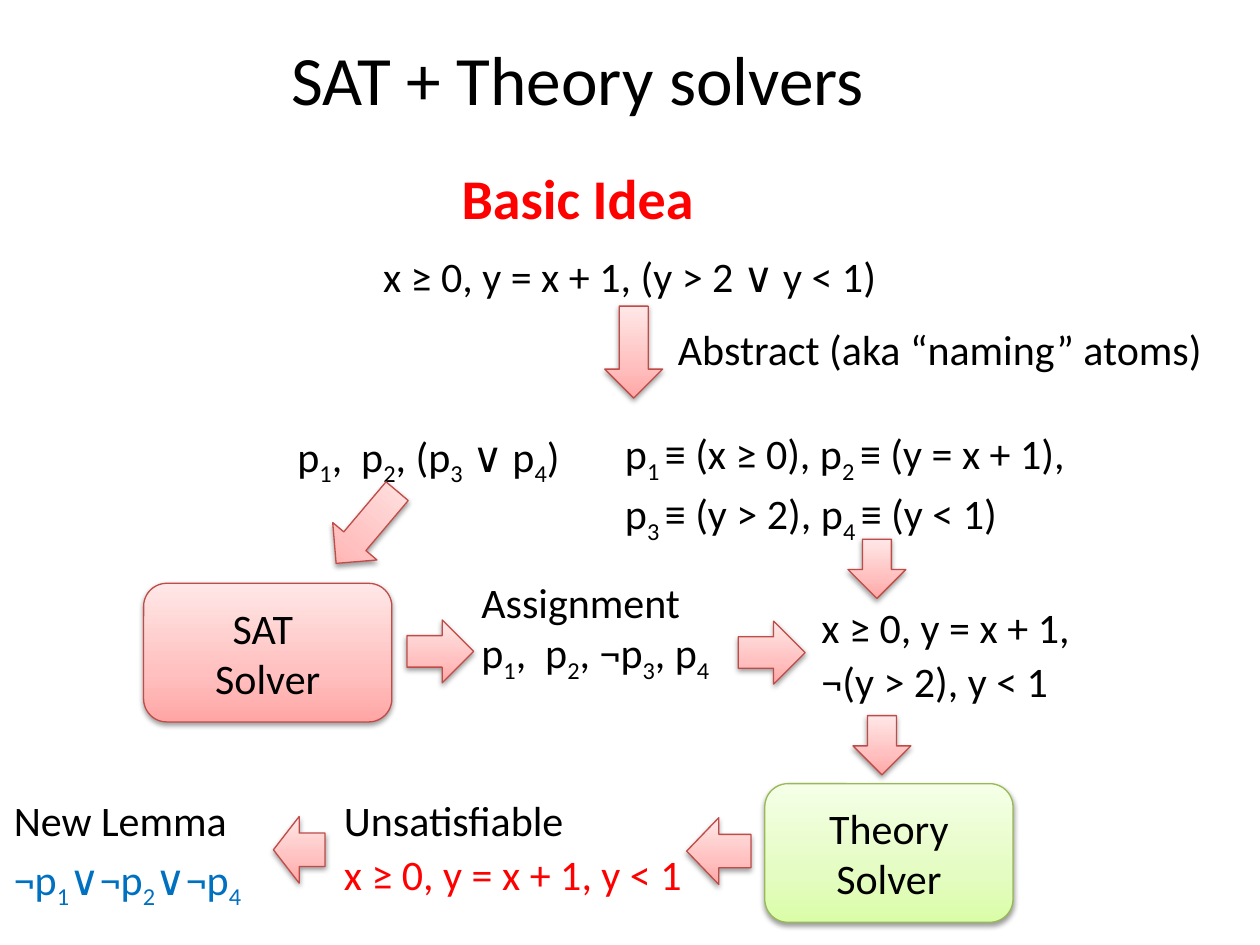
from dataclasses import dataclass

from lxml import etree
from pptx import Presentation
from pptx import util as u
from pptx.dml.color import RGBColor
from pptx.enum import shapes, text
from pptx.oxml import parse_xml
from pptx.oxml.ns import qn

A = "http://schemas.openxmlformats.org/drawingml/2006/main"
MSO = shapes.MSO_SHAPE
ALIGN = text.PP_ALIGN
ANCHOR = text.MSO_ANCHOR


@dataclass(frozen=True)
class Theme:
    font: str = "Calibri"
    title: float = 39.6
    heading: float = 32
    body: float = 24
    black: str = "000000"
    red: str = "FF0000"
    blue: str = "0070C0"
    # Line colour, then gradient colours from bottom to top
    pink: tuple = ("BF4C48", "FFA6A5", "FFC0BF", "FFE7E7")
    green: tuple = ("98B955", "DAFDA7", "E4FCC2", "F5FFE7")


T = Theme()


def add_runs(p, line, size=T.body, color=T.black, bold=False):
    """Write a line in runs; every second part between bars is a subscript."""
    for i, part in enumerate(line.split("|")):
        if not part:
            continue
        r = p.add_run()
        r.text = part
        f = r.font
        f.name, f.size, f.bold = T.font, u.Pt(size), bold
        f.color.rgb = RGBColor.from_string(color)
        if i % 2:
            f._element.set("baseline", "-25000")


def space_before(p, percent):
    pPr = p._p.get_or_add_pPr()
    spc = etree.SubElement(pPr, qn("a:spcBef"))
    etree.SubElement(spc, qn("a:spcPct")).set("val", str(percent * 1000))


def hang(p, inches):
    pPr = p._p.get_or_add_pPr()
    pPr.set("marL", str(u.Inches(inches)))
    pPr.set("indent", str(-u.Inches(inches)))


def set_insets(tf, x, y):
    tf.margin_left = tf.margin_right = u.Inches(x)
    tf.margin_top = tf.margin_bottom = u.Inches(y)


def add_box(s, at):
    tf = s.shapes.add_textbox(*map(u.Inches, at)).text_frame
    tf.word_wrap = True
    return tf


def add_heading(s, at, line, size, anchor=ANCHOR.TOP, **style):
    tf = add_box(s, at)
    tf.vertical_anchor = anchor
    p = tf.paragraphs[0]
    p.alignment = ALIGN.CENTER
    add_runs(p, line, size, **style)
    return p


def add_formula(s, at, *lines, align=ALIGN.LEFT, before=20, last=T.black):
    """Add lines of formula text; the last line may have its own colour."""
    tf = add_box(s, at)
    set_insets(tf, 0, 0)
    tf.auto_size = text.MSO_AUTO_SIZE.SHAPE_TO_FIT_TEXT
    for i, line in enumerate(lines):
        p = tf.add_paragraph() if i else tf.paragraphs[0]
        p.alignment, p.line_spacing = align, 0.9
        hang(p, 0.42)
        space_before(p, before)
        add_runs(p, line, color=last if i == len(lines) - 1 else T.black)


def add_glossy(s, kind, at, colors=T.pink, rotation=0):
    """Add a shape with a three-stop gradient, thin line and soft shadow."""
    sp = s.shapes.add_shape(kind, *map(u.Inches, at))
    sp.rotation = rotation
    line, *stops = colors
    gs = "".join(f'<a:gs pos="{pos}000"><a:srgbClr val="{c}"/></a:gs>'
                 for pos, c in zip((0, 35, 100), stops))
    sp._element.spPr.append(parse_xml(
        f'<a:gradFill xmlns:a="{A}" rotWithShape="1"><a:gsLst>{gs}</a:gsLst>'
        '<a:lin ang="16200000" scaled="1"/></a:gradFill>'))
    sp.line.color.rgb = RGBColor.from_string(line)
    sp.line.width = u.Pt(0.75)
    sp._element.spPr.append(parse_xml(
        f'<a:effectLst xmlns:a="{A}"><a:outerShdw blurRad="{u.Pt(3.1)}" '
        f'dist="{u.Pt(1.6)}" dir="5400000" rotWithShape="0">'
        '<a:srgbClr val="000000"><a:alpha val="38000"/></a:srgbClr>'
        '</a:outerShdw></a:effectLst>'))
    return sp


def add_solver(s, left, top, lines, colors):
    sp = add_glossy(s, MSO.ROUNDED_RECTANGLE, (left, top, 1.97, 1.1), colors)
    tf = sp.text_frame
    tf.vertical_anchor = ANCHOR.MIDDLE
    set_insets(tf, 0.12, 0.06)
    for i, line in enumerate(lines):
        p = tf.add_paragraph() if i else tf.paragraphs[0]
        p.alignment = ALIGN.CENTER
        add_runs(p, line)


def main():
    prs = Presentation()
    prs.slide_width, prs.slide_height = u.Inches(10), u.Inches(7.5)
    s = prs.slides.add_slide(prs.slide_layouts[6])

    # Headings
    add_heading(s, (0, 0.25, 9.17, 0.73), "SAT + Theory solvers", T.title,
                ANCHOR.MIDDLE)
    p = add_heading(s, (0, 1.25, 9.17, 2.42), "Basic Idea", T.heading,
                    color=T.red, bold=True)
    hang(p, 0.38)
    space_before(p, 20)

    # Input formula and its abstraction
    add_formula(s, (0.45, 2.03, 9.17, 0.36),
                "x ≥ 0, y = x + 1, (y > 2 ∨ y < 1) ", align=ALIGN.CENTER)
    add_formula(s, (2.36, 3.42, 2.38, 0.36), "p|1|,  p|2|, (p|3| ∨ p|4|)")
    add_glossy(s, MSO.DOWN_ARROW, (4.8, 2.43, 0.46, 0.73))
    add_formula(s, (5.38, 2.61, 4.62, 0.36), "Abstract (aka “naming” atoms)")
    add_formula(s, (4.96, 3.4, 4.08, 0.81),
                "p|1 |≡ (x ≥ 0), p|2 |≡ (y = x + 1),",
                "p|3 |≡ (y > 2), p|4 |≡ (y < 1)")

    # SAT solver and its assignment
    add_solver(s, 1.14, 4.63, ("SAT ", "Solver"), T.pink)
    add_glossy(s, MSO.DOWN_ARROW, (2.68, 3.81, 0.46, 0.75), rotation=40.2)
    add_glossy(s, MSO.RIGHT_ARROW, (3.23, 4.92, 0.53, 0.5))
    add_formula(s, (3.82, 4.62, 2.38, 0.73),
                "Assignment", "p|1|,  p|2|, ¬p|3|, p|4|", before=0)
    add_glossy(s, MSO.RIGHT_ARROW, (5.86, 4.93, 0.53, 0.5))

    # Theory solver and the atoms it checks
    add_glossy(s, MSO.DOWN_ARROW, (6.73, 4.28, 0.46, 0.47))
    add_formula(s, (6.52, 4.82, 2.17, 0.81),
                "x ≥ 0, y = x + 1,", "¬(y > 2), y < 1")
    add_glossy(s, MSO.DOWN_ARROW, (6.77, 5.68, 0.46, 0.47))
    add_solver(s, 6.07, 6.22, ("Theory", "Solver"), T.green)

    # Conflict and new lemma
    add_glossy(s, MSO.LEFT_ARROW, (5.45, 6.49, 0.51, 0.53))
    add_formula(s, (2.73, 6.35, 2.73, 0.81),
                "Unsatisfiable", "x ≥ 0, y = x + 1, y < 1", last=T.red)
    add_glossy(s, MSO.LEFT_ARROW, (2.17, 6.48, 0.41, 0.53))
    add_formula(s, (0.11, 6.35, 2.73, 1.7),
                "New Lemma", "¬p|1|∨¬p|2|∨¬p|4|", last=T.blue)

    prs.save("out.pptx")


if __name__ == "__main__":
    main()
